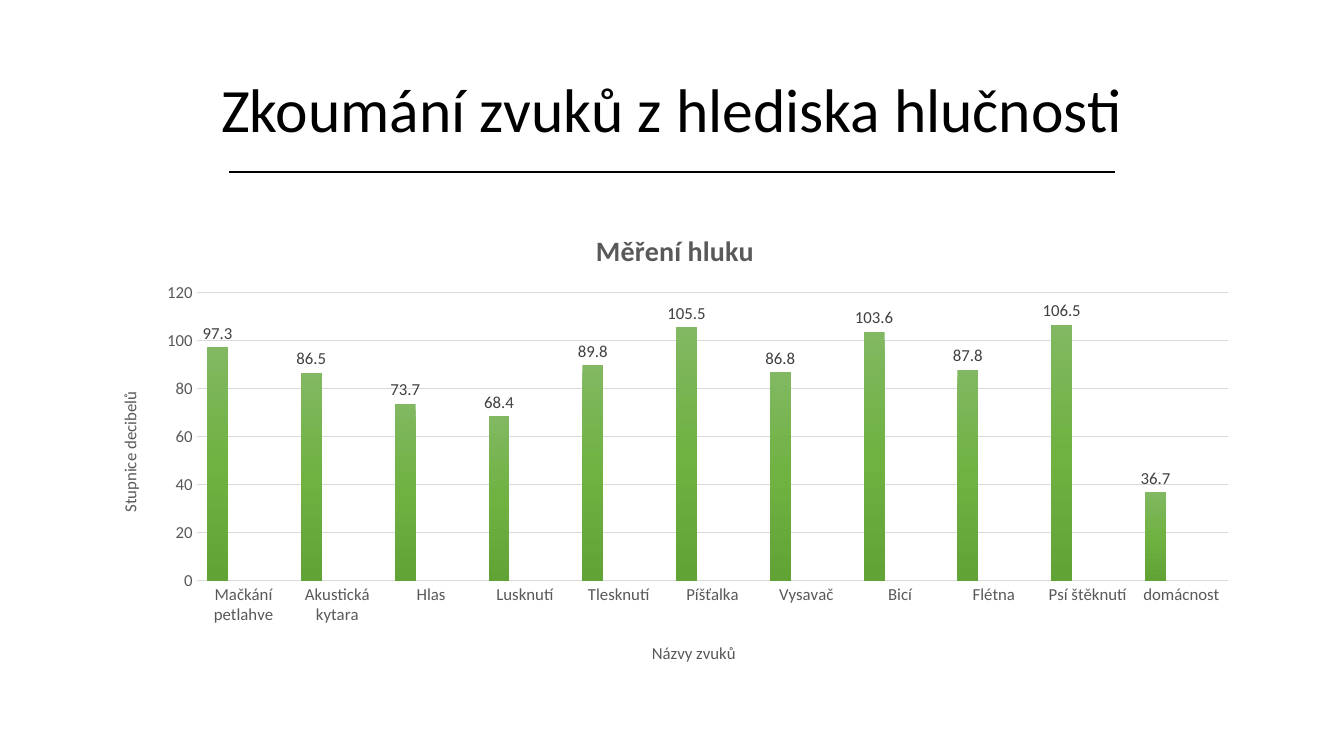
from pptx import Presentation
from pptx.chart.data import CategoryChartData
from pptx.dml.color import RGBColor
from pptx.enum.chart import XL_CHART_TYPE, XL_LABEL_POSITION, XL_TICK_MARK
from pptx.enum.shapes import MSO_CONNECTOR
from pptx.enum.text import MSO_ANCHOR, PP_ALIGN
from pptx.oxml import parse_xml
from pptx.oxml.ns import nsdecls, qn
from pptx.util import Pt
from lxml.etree import SubElement

PX = 9525
FONT = "Calibri"
GREY = "595959"
GRID = "D9D9D9"
SOUNDS = {
    "Mačkání petlahve": 97.3,
    "Akustická kytara": 86.5,
    "Hlas": 73.7,
    "Lusknutí": 68.4,
    "Tlesknutí": 89.8,
    "Píšťalka": 105.5,
    "Vysavač": 86.8,
    "Bicí": 103.6,
    "Flétna": 87.8,
    "Psí štěknutí": 106.5,
    "domácnost": 36.7,
}
GRADIENTS = [
    ("81B861", "6FB242", "62A336"),
    ("71A6DB", "559BDB", "448ACA"),
    ("FFC64B", "FFC000", "E3AB00"),
]


def px(n):
    return int(n * PX)


def rgb(color):
    return RGBColor.from_string(color)


def style(font, size=12, color=GREY, bold=False):
    font.name, font.size, font.bold = FONT, Pt(size), bold
    font.color.rgb = rgb(color)


def write(tf, text, align=PP_ALIGN.CENTER, spacing=None, **fmt):
    p = tf.paragraphs[0]
    p.alignment = align
    p.line_spacing = spacing
    r = p.add_run()
    r.text = text
    style(r.font, **fmt)


def add_title(s, text):
    title = s.shapes.title
    title.left, title.top, title.width, title.height = map(px, (88, 38, 1104, 139))
    title.text_frame.vertical_anchor = MSO_ANCHOR.MIDDLE
    write(title.text_frame, text, spacing=0.9, size=44, color="000000")


def add_rule(s, x1, x2, y):
    rule = s.shapes.add_connector(MSO_CONNECTOR.STRAIGHT, px(x1), px(y), px(x2), px(y))
    rule.line.color.rgb = rgb("000000")
    rule.line.width = Pt(1)
    SubElement(rule._element.spPr, qn("a:effectLst"))


def set_layout(parent, index, **fractions):
    """Place a chart part by fractions of the chart's size."""
    for old in parent.findall(qn("c:layout")):
        parent.remove(old)
    target = '<c:layoutTarget val="inner"/>' if "w" in fractions else ""
    modes = "".join(f'<c:{k}Mode val="edge"/>' for k in fractions if k in "xy")
    sizes = "".join(f'<c:{k} val="{v}"/>' for k, v in fractions.items())
    parent.insert(index, parse_xml(
        f'<c:layout {nsdecls("c")}><c:manualLayout>{target}{modes}{sizes}'
        '</c:manualLayout></c:layout>'))


def add_chart_title(title, text, x, y, rotation=0, **fmt):
    write(title.text_frame, text, **fmt)
    body = title.text_frame._txBody.bodyPr
    body.set("rot", str(rotation * 60000))
    body.set("vert", "horz")
    set_layout(title._element, 1, x=x, y=y)


def fill_gradient(series, colors):
    stops = "".join(
        f'<a:gs pos="{i * 50000}"><a:srgbClr val="{c}"/></a:gs>'
        for i, c in enumerate(colors))
    series._element.get_or_add_spPr().insert(0, parse_xml(
        f'<a:gradFill {nsdecls("a")} rotWithShape="1"><a:gsLst>{stops}</a:gsLst>'
        '<a:lin ang="5400000" scaled="0"/></a:gradFill>'))


def format_series(series, colors):
    fill_gradient(series, colors)
    labels = series.data_labels
    labels.show_value = True
    labels.position = XL_LABEL_POSITION.OUTSIDE_END
    style(labels.font, color="404040")


def format_axis(axis):
    axis.major_tick_mark = axis.minor_tick_mark = XL_TICK_MARK.NONE
    style(axis.tick_labels.font)


def add_noise_chart(s):
    data = CategoryChartData()
    data.categories = SOUNDS
    data.add_series("Series 1", SOUNDS.values())
    for name in ("Series 2", "Series 3"):
        data.add_series(name, [None] * len(SOUNDS))
    chart = s.shapes.add_chart(
        XL_CHART_TYPE.COLUMN_CLUSTERED, *map(px, (88, 192, 1104, 457)), data).chart
    style(chart.font, size=10, color="000000")
    chart.has_legend = False
    chart.has_title = True
    add_chart_title(chart.chart_title, "Měření hluku", 0.43, 0.05, size=20, bold=True)

    plot = chart.plots[0]
    plot.gap_width, plot.overlap, plot.vary_by_categories = 100, -24, False
    for series, colors in zip(plot.series, GRADIENTS):
        format_series(series, colors)

    names, decibels = chart.category_axis, chart.value_axis
    format_axis(names)
    names.format.line.color.rgb = rgb(GRID)
    names.format.line.width = Pt(1)
    add_chart_title(names.axis_title, "Názvy zvuků", 0.48, 0.91)

    format_axis(decibels)
    decibels.minimum_scale, decibels.maximum_scale, decibels.major_unit = 0, 120, 20
    decibels.format.line.fill.background()
    decibels.major_gridlines.format.line.color.rgb = rgb(GRID)
    decibels.major_gridlines.format.line.width = Pt(0.75)
    add_chart_title(decibels.axis_title, "Stupnice decibelů", 0.02, 0.39, rotation=-90)

    plot_area = chart._chartSpace.chart.plotArea
    set_layout(plot_area, 0, x=0.09, y=0.19, w=0.89, h=0.6)


def main():
    prs = Presentation()
    prs.slide_width, prs.slide_height = px(1280), px(720)
    s = prs.slides.add_slide(prs.slide_layouts[5])
    add_title(s, "Zkoumání zvuků z hlediska hlučnosti")
    add_noise_chart(s)
    add_rule(s, 218, 1062, 164)
    prs.save("out.pptx")


if __name__ == "__main__":
    main()
